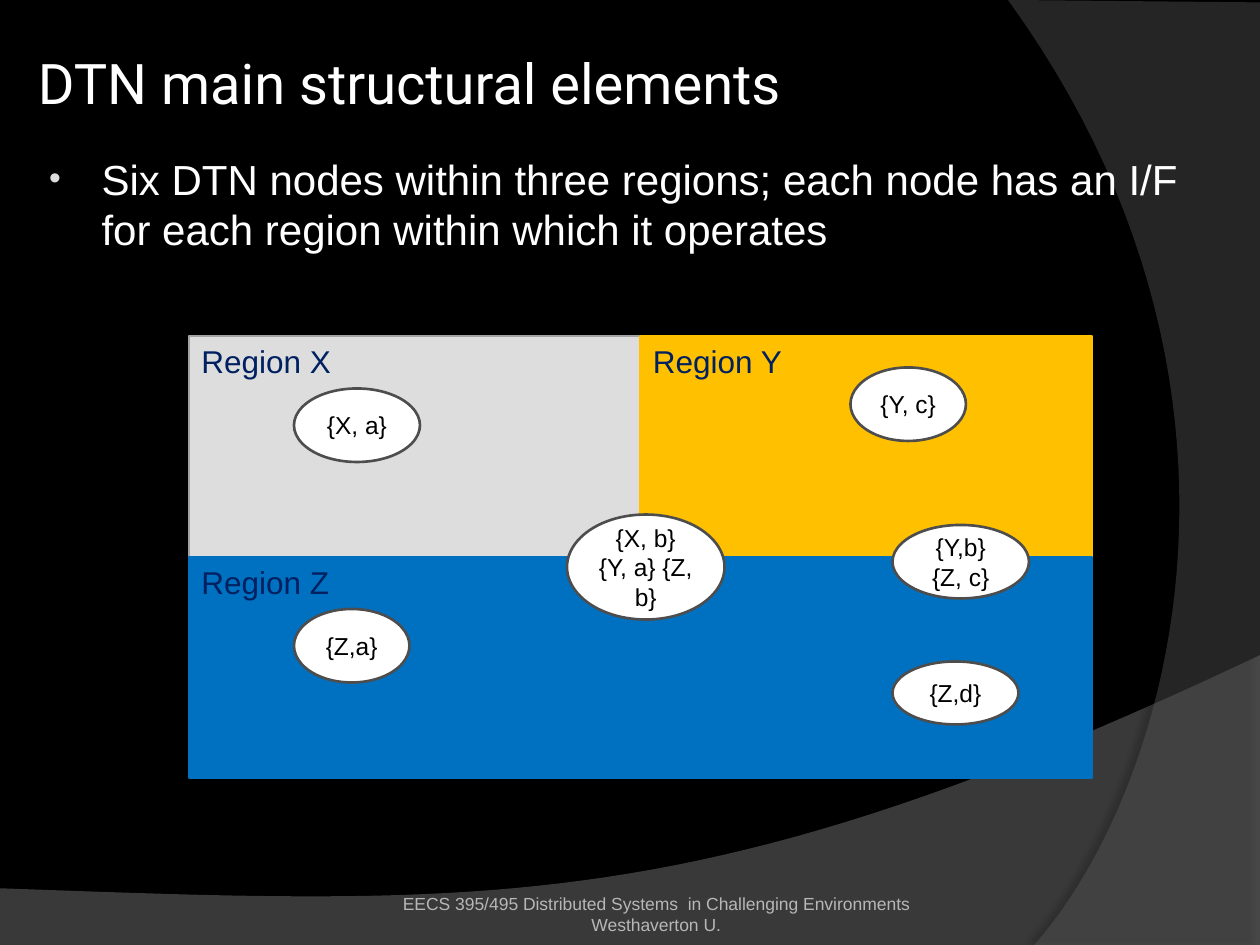
"""Build the slide on the main structural elements of a DTN."""
from dataclasses import dataclass

from lxml import etree
from pptx import Presentation
from pptx.dml.color import RGBColor
from pptx.enum.shapes import MSO_SHAPE
from pptx.enum.text import MSO_ANCHOR, PP_ALIGN
from pptx.oxml.ns import qn
from pptx.util import Pt

RECTANGLE, ELLIPSE = MSO_SHAPE.RECTANGLE, MSO_SHAPE.OVAL
TOP, MIDDLE, BOTTOM = MSO_ANCHOR.TOP, MSO_ANCHOR.MIDDLE, MSO_ANCHOR.BOTTOM
LEFT, CENTER = PP_ALIGN.LEFT, PP_ALIGN.CENTER


@dataclass(frozen=True)
class Theme:
    background: str = "000000"
    light: str = "FFFFFF"
    lower_wave: str = "7F7F7F"
    side_wave: str = "5E5E5E"
    footer: str = "B7B7B7"
    bullet: str = "DDDDDD"
    region_x: str = "DDDDDD"
    region_x_edge: str = "A3A3A3"
    region_y: str = "FFC000"
    region_z: str = "0070C0"
    region_name: str = "002060"
    node_edge: str = "4D4D4D"
    node_text: str = "000000"
    heading_font: str = "Roboto"
    body_font: str = "Arial"
    title_size: float = 32
    body_size: float = 24
    region_size: float = 18
    node_size: float = 14
    footer_size: float = 10
    edge_width: float = 1.5


def rgb(color):
    return RGBColor.from_string(color)


def bezier(start, control_1, control_2, end, steps=48):
    points = []
    for step in range(steps + 1):
        t = step / steps
        weights = ((1 - t) ** 3, 3 * t * (1 - t) ** 2, 3 * t * t * (1 - t), t ** 3)
        points.append(tuple(
            sum(w * value for w, value in zip(weights, axis))
            for axis in zip(start, control_1, control_2, end)))
    return points


class SlideBuilder:
    def __init__(self, slide, theme):
        self.slide = slide
        self.theme = theme
        slide.background.fill.solid()
        slide.background.fill.fore_color.rgb = rgb(theme.background)

    def fill_frame(self, frame, lines, size, color, align=LEFT, anchor=TOP,
                   insets=(7.2, 3.6, 7.2, 3.6), font=None):
        frame.word_wrap = True
        frame.vertical_anchor = anchor
        (frame.margin_left, frame.margin_top,
         frame.margin_right, frame.margin_bottom) = map(Pt, insets)
        for index, line in enumerate(lines):
            paragraph = frame.add_paragraph() if index else frame.paragraphs[0]
            paragraph.alignment = align
            run = paragraph.add_run()
            run.text = line
            run.font.size = Pt(size)
            run.font.name = font or self.theme.body_font
            run.font.color.rgb = rgb(color)

    def text(self, box, lines, size, color, **style):
        frame = self.slide.shapes.add_textbox(*map(Pt, box)).text_frame
        self.fill_frame(frame, lines, size, color, **style)
        return frame

    def bullet(self, box, line):
        frame = self.text(box, [line], self.theme.body_size, self.theme.light)
        properties = frame.paragraphs[0]._p.get_or_add_pPr()
        properties.set("marL", str(Pt(33)))
        properties.set("indent", str(-Pt(30)))
        before = etree.SubElement(properties, qn("a:spcBef"))
        etree.SubElement(before, qn("a:spcPct"), val="20000")
        tint = etree.SubElement(properties, qn("a:buClr"))
        etree.SubElement(tint, qn("a:srgbClr"), val=self.theme.bullet)
        etree.SubElement(properties, qn("a:buSzPct"), val="80000")
        etree.SubElement(properties, qn("a:buFont"), typeface=self.theme.body_font)
        etree.SubElement(properties, qn("a:buChar"), char="•")

    def shape(self, preset, box, fill, edge):
        shape = self.slide.shapes.add_shape(preset, *map(Pt, box))
        shape.shadow.inherit = False
        shape.fill.solid()
        shape.fill.fore_color.rgb = rgb(fill)
        shape.line.color.rgb = rgb(edge)
        shape.line.width = Pt(self.theme.edge_width)
        return shape

    def region_name(self, corner, name):
        self.text((*corner, 108, 29), [name], self.theme.region_size,
                  self.theme.region_name)

    def node(self, box, endpoints):
        oval = self.shape(ELLIPSE, box, self.theme.light, self.theme.node_edge)
        self.fill_frame(oval.text_frame, [endpoints], self.theme.node_size,
                        self.theme.node_text, align=CENTER, anchor=MIDDLE,
                        insets=(5, 3.6, 5, 3.6))

    def wave(self, points, color, opacity, shadow_opacity, distance, angle):
        start, *rest = [(Pt(x), Pt(y)) for x, y in points]
        builder = self.slide.shapes.build_freeform(*start)
        builder.add_line_segments(rest, close=True)
        wave = builder.convert_to_shape()
        wave.shadow.inherit = False
        wave.line.fill.background()
        wave.fill.solid()
        wave.fill.fore_color.rgb = rgb(color)
        properties = wave._element.spPr
        tint = properties.find(qn("a:solidFill")).find(qn("a:srgbClr"))
        etree.SubElement(tint, qn("a:alpha"), val=str(opacity * 1000))
        shadow = etree.SubElement(
            properties.find(qn("a:effectLst")), qn("a:outerShdw"),
            blurRad=str(Pt(4)), dist=str(Pt(distance)), dir=str(angle * 60000),
            algn="ctr", rotWithShape="0")
        shade = etree.SubElement(shadow, qn("a:srgbClr"), val=self.theme.background)
        etree.SubElement(shade, qn("a:alpha"), val=str(shadow_opacity * 1000))


def main():
    theme = Theme()
    deck = Presentation()
    deck.slide_width, deck.slide_height = Pt(720), Pt(540)
    page = SlideBuilder(deck.slides.add_slide(deck.slide_layouts[6]), theme)

    lower_edge = bezier((720, 374.4), (402.5, 524.9), (281.5, 517.7), (0, 507.6))
    side_edge = bezier((591.1, 540), (673.2, 445.7), (733, 216), (576, 0))
    page.wave([(0, 540), (720, 540), *lower_edge], theme.lower_wave, 45, 35, 3.5, 270)
    page.wave([(720, 1.4), (720, 540), *side_edge], theme.side_wave, 40, 45, 4, 180)

    page.text((210, 505.5, 330, 29),
              ["EECS 395/495 Distributed Systems  in Challenging Environments",
               "Westhaverton U."],
              theme.footer_size, theme.footer, align=CENTER, anchor=BOTTOM,
              insets=(0, 3.6, 0, 0))
    page.text((18, 21.6, 684, 50.4), ["DTN main structural elements"],
              theme.title_size, theme.light, anchor=MIDDLE,
              insets=(3.6, 3.6, 3.6, 3.6), font=theme.heading_font)
    page.bullet((18, 84, 684, 414),
                "Six DTN nodes within three regions; each node has an I/F "
                "for each region within which it operates")

    left, top, width, height = 108, 192, 258, 126.3
    regions = [
        ("Region X", (left, top), width, theme.region_x, theme.region_x_edge),
        ("Region Y", (left + width, top), width, theme.region_y, theme.region_y),
        ("Region Z", (left, top + height), 2 * width, theme.region_z, theme.region_z),
    ]
    nodes = [
        ((168, 222, 72, 42), "{X, a}"),
        ((168, 348, 66, 42), "{Z,a}"),
        ((510, 378, 72, 36), "{Z,d}"),
        ((510, 300, 78, 42), "{Y,b} {Z, c}"),
        ((486, 210, 66, 42), "{Y, c}"),
        ((324, 294, 90, 60), "{X, b} {Y, a} {Z, b}"),
    ]
    for name, corner, span, fill, edge in regions:
        page.shape(RECTANGLE, (*corner, span, height), fill, edge)
    for box, endpoints in nodes:
        page.node(box, endpoints)
    for name, corner, *_ in regions:
        page.region_name(corner, name)

    deck.save("out.pptx")


if __name__ == "__main__":
    main()
